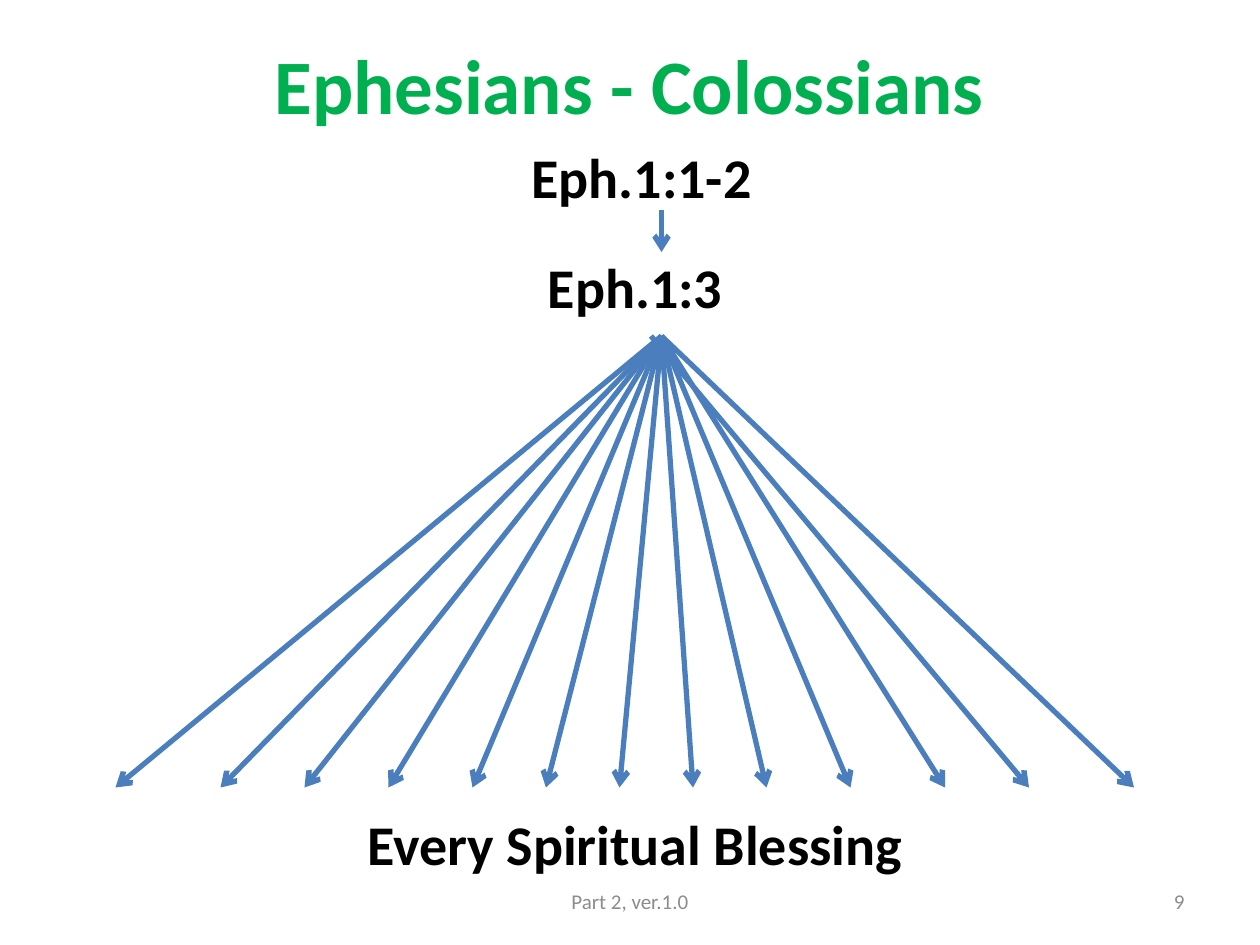
from dataclasses import dataclass

from lxml import etree
from pptx import Presentation
from pptx.dml.color import RGBColor
from pptx.enum.text import MSO_ANCHOR, MSO_AUTO_SIZE, PP_ALIGN
from pptx.enum.shapes import MSO_CONNECTOR
from pptx.oxml.ns import qn
from pptx.util import Pt

STRAIGHT = MSO_CONNECTOR.STRAIGHT
CENTER, RIGHT = PP_ALIGN.CENTER, PP_ALIGN.RIGHT
TOP, MIDDLE = MSO_ANCHOR.TOP, MSO_ANCHOR.MIDDLE
NO_AUTOFIT = MSO_AUTO_SIZE.NONE


@dataclass(frozen=True)
class Theme:
    """Font, colours and type sizes of the slide."""
    font: str = "Calibri"
    title: RGBColor = RGBColor(0x00, 0xB0, 0x50)
    body: RGBColor = RGBColor(0x00, 0x00, 0x00)
    footer: RGBColor = RGBColor(0x8C, 0x8C, 0x8C)
    arrow: RGBColor = RGBColor(0x4B, 0x7E, 0xBC)
    title_size: int = 44
    body_size: int = 32
    footer_size: int = 12
    arrow_width: int = 3


THEME = Theme()
PASSAGES = [(" Eph.1:1-2", 0), ("Eph.1:3", 24), ("Every Spiritual Blessing", 280)]
FAN_X, FAN_TOP, FAN_BOTTOM = 378, 192, 450
BLESSING_ENDS = [66, 126, 174, 222, 270, 312, 354, 396, 438, 486, 540, 588, 648]
OFFSET_STARTS = {588: 372}


def place(box, left, top, width, height, anchor):
    """Position a text shape and set how its text sits."""
    box.left, box.top, box.width, box.height = map(Pt, (left, top, width, height))
    frame = box.text_frame
    frame.word_wrap = True
    frame.auto_size = NO_AUTOFIT
    frame.vertical_anchor = anchor


def style(para, size, color, bold=False, align=CENTER, space_before=0):
    """Format a paragraph and its runs."""
    para.alignment = align
    para.space_before = Pt(space_before)
    for span in para.runs:
        span.font.name = THEME.font
        span.font.size = Pt(size)
        span.font.bold = bold
        span.font.color.rgb = color


def fill_title(box, text):
    """Write the slide title."""
    place(box, 54, 18, 612, 60, MIDDLE)
    box.text_frame.text = text
    style(box.text_frame.paragraphs[0], THEME.title_size, THEME.title, bold=True)


def fill_body(box, passages):
    """Write the passages, each with its own space before."""
    place(box, 36, 78, 654, 444, TOP)
    box.text_frame.text = "\n".join(text for text, _ in passages)
    for para, (_, gap) in zip(box.text_frame.paragraphs, passages):
        style(para, THEME.body_size, THEME.body, bold=True, space_before=gap)


def add_footer(page, text, left, width, align):
    """Add a small grey text at the foot of the page."""
    box = page.shapes.add_textbox(0, 0, 0, 0)
    place(box, left, 500.5, width, 28.75, MIDDLE)
    box.text_frame.text = text
    style(box.text_frame.paragraphs[0], THEME.footer_size, THEME.footer, align=align)


def add_arrow(page, start_x, start_y, end_x, end_y):
    """Add a straight line with an open arrowhead at its end."""
    arrow = page.shapes.add_connector(
        STRAIGHT, Pt(start_x), Pt(start_y), Pt(end_x), Pt(end_y))
    arrow.line.color.rgb = THEME.arrow
    arrow.line.width = Pt(THEME.arrow_width)
    etree.SubElement(arrow.line._get_or_add_ln(), qn("a:tailEnd"), type="arrow")
    etree.SubElement(arrow._element.spPr, qn("a:effectLst"))


def main():
    """Build the slide and save it."""
    deck = Presentation()
    deck.slide_width, deck.slide_height = Pt(720), Pt(540)
    page = deck.slides.add_slide(deck.slide_layouts[0])
    fill_title(page.shapes.title, "Ephesians - Colossians")
    fill_body(page.placeholders[1], PASSAGES)
    add_footer(page, "9", 516, 168, RIGHT)
    add_footer(page, "Part 2, ver.1.0", 246, 228, CENTER)
    add_arrow(page, FAN_X, 120, FAN_X, 144)
    for end_x in BLESSING_ENDS:
        add_arrow(page, OFFSET_STARTS.get(end_x, FAN_X), FAN_TOP, end_x, FAN_BOTTOM)
    deck.save("out.pptx")


if __name__ == "__main__":
    main()
